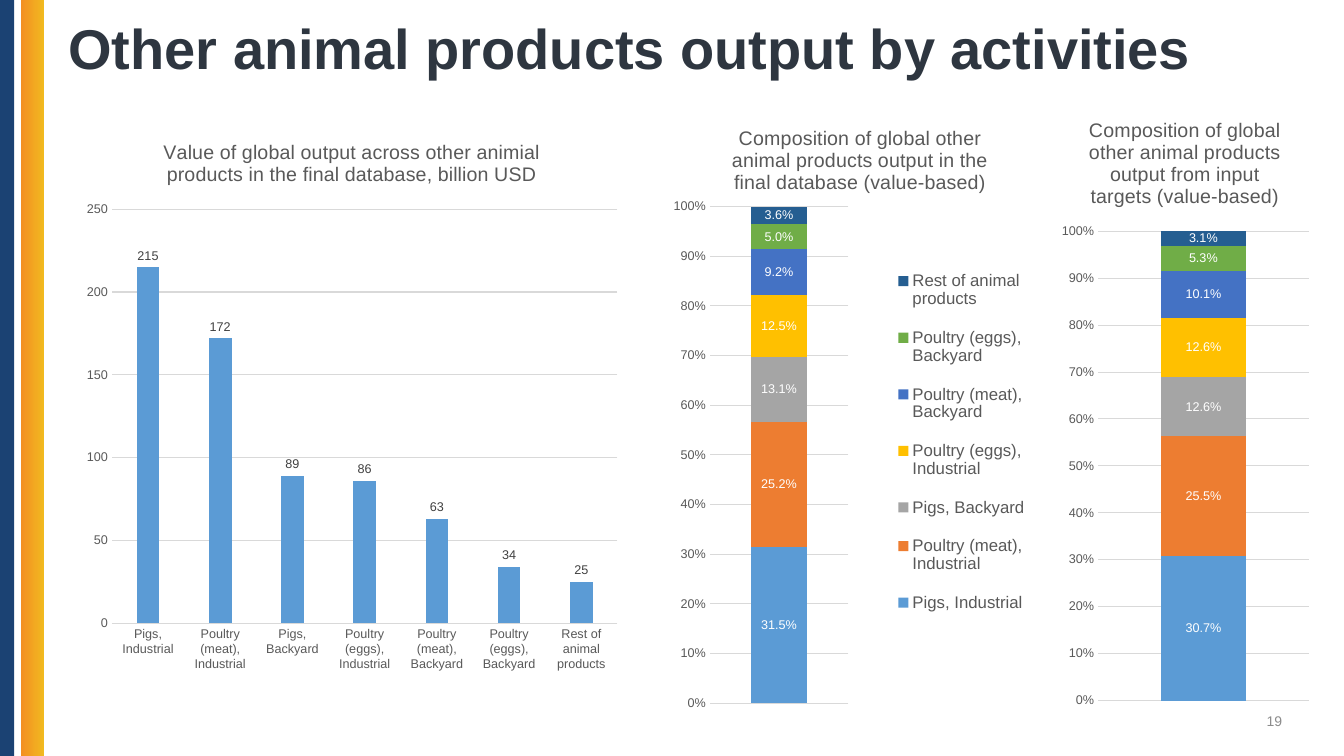
from dataclasses import dataclass

from lxml.etree import SubElement
from pptx import Presentation
from pptx.chart.data import CategoryChartData
from pptx.dml.color import RGBColor
from pptx.enum.chart import XL_CHART_TYPE, XL_LABEL_POSITION, XL_LEGEND_POSITION, XL_TICK_MARK
from pptx.enum.shapes import MSO_SHAPE
from pptx.enum.text import MSO_ANCHOR, MSO_AUTO_SIZE, PP_ALIGN
from pptx.oxml.ns import qn
from pptx.util import Cm, Pt


@dataclass(frozen=True)
class Theme:
    font: str = "Arial"
    navy: str = "1B4273"
    gold: tuple = ("F38F22", "F1BA20")
    title: str = "2E3640"
    number: str = "8C8C8C"
    axis: str = "595959"
    label: str = "404040"
    white: str = "FFFFFF"
    grid: str = "D9D9D9"
    series: tuple = ("5B9BD5", "ED7D31", "A5A5A5", "FFC000", "4472C4", "70AD47", "255E91")
    title_size: int = 40
    chart_title_size: int = 14
    legend_size: int = 12
    number_size: int = 10
    chart_size: int = 9


THEME = Theme()
PRODUCTS = ["Pigs, Industrial", "Poultry (meat), Industrial", "Pigs, Backyard",
            "Poultry (eggs), Industrial", "Poultry (meat), Backyard",
            "Poultry (eggs), Backyard", "Rest of animal products"]
OUTPUT_VALUES = [215, 172, 89, 86, 63, 34, 25]
FINAL_SHARES = [0.315, 0.252, 0.131, 0.125, 0.092, 0.05, 0.036]
TARGET_SHARES = [0.307, 0.255, 0.126, 0.126, 0.101, 0.053, 0.031]


def color(value):
    return RGBColor.from_string(value)


def apply(target, formats):
    for name, value in formats.items():
        setattr(target, name, value)


def set_font(font, size, value, bold=False):
    apply(font, {"name": THEME.font, "size": Pt(size), "bold": bold})
    font.color.rgb = color(value)


def place(shape, box):
    apply(shape, dict(zip(("left", "top", "width", "height"), map(Cm, box))))


def set_layout(element, percents, inner=False):
    """Fix a plot area or legend to left, top, width, height in percent of the chart."""
    layout = element.find(qn("c:layout"))
    if layout is None:
        layout = SubElement(element, qn("c:layout"))
        before = element.find(qn("c:legendPos"))
        if before is None:
            element.insert(0, layout)
        else:
            before.addnext(layout)
    manual = SubElement(layout, qn("c:manualLayout"))
    values = [("layoutTarget", "inner")] if inner else []
    values += [("xMode", "edge"), ("yMode", "edge")]
    values += [(name, str(percent / 100)) for name, percent in zip("xywh", percents)]
    for name, value in values:
        SubElement(manual, qn(f"c:{name}")).set("val", value)


def add_side_bars(page, box):
    left, top, width, height = box
    for offset, bar_width in ((0, 0.36), (0.53, width - 0.53)):
        bar = page.shapes.add_shape(MSO_SHAPE.RECTANGLE, Cm(left + offset), Cm(top),
                                    Cm(bar_width), Cm(height))
        bar.shadow.inherit = False
        bar.line.fill.background()
        if offset:
            bar.fill.gradient()
            bar.fill.gradient_angle = 0
            for stop, value in zip(bar.fill.gradient_stops, THEME.gold):
                stop.color.rgb = color(value)
        else:
            bar.fill.solid()
            bar.fill.fore_color.rgb = color(THEME.navy)


def add_title(page, box):
    title = page.shapes.title
    place(title, box)
    apply(title.text_frame, {"text": "Other animal products output by activities",
                             "vertical_anchor": MSO_ANCHOR.MIDDLE, "word_wrap": True,
                             "auto_size": MSO_AUTO_SIZE.NONE})
    para = title.text_frame.paragraphs[0]
    apply(para, {"alignment": PP_ALIGN.LEFT, "line_spacing": 0.9})
    set_font(para.runs[0].font, THEME.title_size, THEME.title, True)


def add_page_number(page, box):
    frame = page.shapes.add_textbox(*map(Cm, box)).text_frame
    apply(frame, {"text": "19", "word_wrap": True, "vertical_anchor": MSO_ANCHOR.MIDDLE})
    para = frame.paragraphs[0]
    para.alignment = PP_ALIGN.RIGHT
    set_font(para.runs[0].font, THEME.number_size, THEME.number)


def add_column_chart(page, box, kind, title, categories, series, plot, formats):
    data = CategoryChartData(number_format=formats["labels"])
    data.categories = categories
    for name, values in series:
        data.add_series(name, values)
    chart = page.shapes.add_chart(kind, *map(Cm, box), data).chart
    set_font(chart.font, THEME.chart_size, THEME.axis)
    chart.has_legend = False
    chart.chart_title.text_frame.text = title
    set_font(chart.chart_title.text_frame.paragraphs[0].runs[0].font,
             THEME.chart_title_size, THEME.axis)
    chart.chart_title.include_in_layout = False

    for axis in (chart.category_axis, chart.value_axis):
        apply(axis, {"major_tick_mark": XL_TICK_MARK.NONE, "minor_tick_mark": XL_TICK_MARK.NONE})
        set_font(axis.tick_labels.font, THEME.chart_size, THEME.axis)
    grid_line = chart.value_axis.major_gridlines.format.line
    for line in (grid_line, chart.category_axis.format.line):
        line.color.rgb = color(THEME.grid)
        line.width = Pt(0.75)
    chart.value_axis.format.line.fill.background()
    apply(chart.value_axis, {"minimum_scale": 0, "maximum_scale": formats["maximum"],
                             "major_unit": formats["step"]})
    apply(chart.value_axis.tick_labels, {"number_format": formats["ticks"],
                                         "number_format_is_linked": False})

    columns = chart.plots[0]
    apply(columns, {"gap_width": formats["gap"], "overlap": formats["overlap"],
                    "vary_by_categories": False})
    for item, value in zip(columns.series, THEME.series):
        item.format.fill.solid()
        item.format.fill.fore_color.rgb = color(value)
        apply(item.data_labels, {"show_value": True, "position": formats["position"],
                                 "number_format": formats["labels"],
                                 "number_format_is_linked": False})
        set_font(item.data_labels.font, THEME.chart_size, formats["label_color"])
    set_layout(chart._chartSpace.chart.plotArea, plot, inner=True)
    return chart


def add_value_chart(page, box):
    add_column_chart(
        page, box, XL_CHART_TYPE.COLUMN_CLUSTERED,
        "Value of global output across other animial products in the final database, billion USD",
        PRODUCTS, [("Output", OUTPUT_VALUES)], (6.6, 16, 91.4, 73.5),
        {"labels": "0", "ticks": "0", "maximum": 250, "step": 50, "gap": 219, "overlap": -27,
         "position": XL_LABEL_POSITION.OUTSIDE_END, "label_color": THEME.label})


def add_share_chart(page, box, title, shares, plot):
    chart = add_column_chart(
        page, box, XL_CHART_TYPE.COLUMN_STACKED_100, title, ["1"],
        [(name, [share]) for name, share in zip(PRODUCTS, shares)], plot,
        {"labels": "0.0%", "ticks": "0%", "maximum": 1, "step": 0.1, "gap": 150, "overlap": 100,
         "position": XL_LABEL_POSITION.CENTER, "label_color": THEME.white})
    chart.category_axis.visible = False
    return chart


def add_legend(chart, percents):
    chart.has_legend = True
    apply(chart.legend, {"position": XL_LEGEND_POSITION.RIGHT, "include_in_layout": False})
    set_font(chart.legend.font, THEME.legend_size, THEME.axis)
    set_layout(chart.legend._element, percents)


def main():
    deck = Presentation()
    apply(deck, {"slide_width": Cm(33.87), "slide_height": Cm(19.05)})
    page = deck.slides.add_slide(deck.slide_layouts[5])
    add_side_bars(page, (0, 0, 1.12, 19.05))
    add_title(page, (1.47, 0.38, 30.48, 1.85))
    add_page_number(page, (24.94, 17.65, 7.62, 1.02))
    add_value_chart(page, (1.9, 3, 13.94, 14.2))
    final_chart = add_share_chart(
        page, (16.94, 2.62, 9.47, 15.49),
        "Composition of global other animal products output in the final database (value-based)",
        FINAL_SHARES, (10, 16.7, 36.9, 80.8))
    add_legend(final_chart, (56, 24, 42, 62))
    add_share_chart(
        page, (26.62, 2.41, 6.48, 15.75),
        "Composition of global other animal products output from input targets (value-based)",
        TARGET_SHARES, (16.2, 21.7, 82, 75.1))
    deck.save("out.pptx")


if __name__ == "__main__":
    main()
